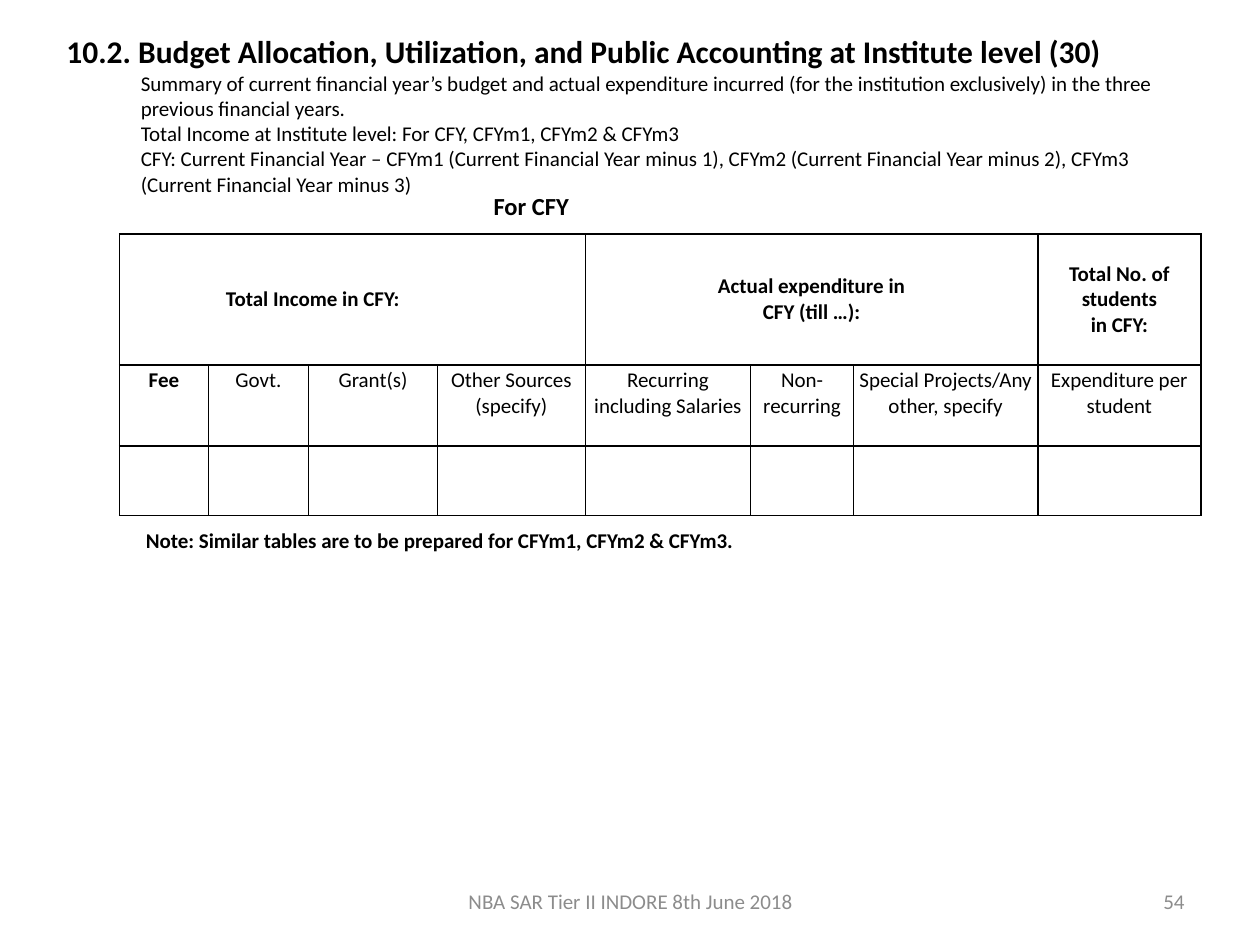
from lxml.etree import SubElement
from pptx import Presentation
from pptx.dml.color import RGBColor
from pptx.enum.text import MSO_ANCHOR as Anchor, MSO_AUTO_SIZE as AutoSize, PP_ALIGN as Align
from pptx.oxml.ns import qn
from pptx.util import Cm, Pt

BLACK, GREY = "000000", "8C8C8C"
COLUMN_WIDTHS = [1.79, 2.02, 2.6, 2.98, 3.33, 2.08, 3.71, 3.29]
ROW_HEIGHTS = [2.64, 1.63, 1.4]
# First column, last column, lines, right margin
GROUP_HEADINGS = [
    (0, 3, ["Total Income in CFY:"], 1.65),
    (4, 6, ["Actual expenditure in", "CFY (till …):"], 0.05),
    (7, 7, ["Total No. of students", "in CFY:"], 0.05),
]
COLUMN_HEADINGS = [
    ["Fee"], ["Govt."], ["Grant(s)"], ["Other Sources", "(specify)"],
    ["Recurring including Salaries"], ["Non-recurring"],
    ["Special Projects/Any other, specify"], ["Expenditure per student"],
]
SUMMARY = [
    "Summary of current financial year’s budget and actual expenditure incurred "
    "(for the institution exclusively) in the three previous financial years.",
    "Total Income at Institute level: For CFY, CFYm1, CFYm2 & CFYm3",
    "CFY: Current Financial Year – CFYm1 (Current Financial Year minus 1), "
    "CFYm2 (Current Financial Year minus 2), CFYm3 (Current Financial Year minus 3)",
]


def rgb(color):
    return RGBColor.from_string(color)


def style(paragraph, size=12, bold=False, color=BLACK, align=Align.LEFT):
    paragraph.alignment = align
    font = paragraph.font
    font.name, font.size, font.bold = "Calibri", Pt(size), bold
    font.color.rgb = rgb(color)


def add_text(slide, box, lines, anchor=Anchor.TOP, wrap=True, **look):
    frame = slide.shapes.add_textbox(*map(Cm, box)).text_frame
    frame.word_wrap = wrap
    frame.auto_size = AutoSize.NONE
    frame.vertical_anchor = anchor
    frame.text = "\n".join(lines)
    for paragraph in frame.paragraphs:
        style(paragraph, **look)
    return frame


def add_borders(cell, color=BLACK, width=1):
    properties = cell._tc.get_or_add_tcPr()
    for side in ("a:lnL", "a:lnR", "a:lnT", "a:lnB"):
        line = SubElement(properties, qn(side), w=str(Pt(width)))
        fill = SubElement(line, qn("a:solidFill"))
        SubElement(fill, qn("a:srgbClr"), val=color)


def fill_cell(cell, lines, bold=False, anchor=Anchor.TOP, right=0.05):
    cell.margin_left = cell.margin_top = cell.margin_bottom = Cm(0.05)
    cell.margin_right = Cm(right)
    cell.vertical_anchor = anchor
    cell.text = "\n".join(lines)
    for paragraph in cell.text_frame.paragraphs:
        style(paragraph, bold=bold, align=Align.CENTER)


def add_budget_table(slide):
    table = slide.shapes.add_table(
        len(ROW_HEIGHTS), len(COLUMN_WIDTHS), Cm(2.41), Cm(4.72),
        Cm(sum(COLUMN_WIDTHS)), Cm(sum(ROW_HEIGHTS))).table
    table.first_row = table.horz_banding = False
    for column, width in zip(table.columns, COLUMN_WIDTHS):
        column.width = Cm(width)
    for row, height in zip(table.rows, ROW_HEIGHTS):
        row.height = Cm(height)
    for cell in table.iter_cells():
        add_borders(cell)
        cell.fill.background()

    # Heading rows
    for first, last, lines, right in GROUP_HEADINGS:
        heading = table.cell(0, first)
        if last > first:
            heading.merge(table.cell(0, last))
        fill_cell(heading, lines, bold=True, anchor=Anchor.MIDDLE, right=right)
    for index, lines in enumerate(COLUMN_HEADINGS):
        fill_cell(table.cell(1, index), lines, bold=index == 0)


def main():
    deck = Presentation()
    deck.slide_width, deck.slide_height = Cm(25.4), Cm(19.05)
    slide = deck.slides.add_slide(deck.slide_layouts[6])

    # Heading with indented summary
    intro = add_text(
        slide, (1.09, 0.53, 23.19, 3.58),
        ["10.2. Budget Allocation, Utilization, and Public Accounting at Institute level (30)"]
        + SUMMARY)
    heading, *summary = intro.paragraphs
    style(heading, size=18, bold=True)
    for paragraph in summary:
        paragraph._p.get_or_add_pPr().set("marL", str(Cm(1.5)))

    # Budget table with its caption and note
    add_text(slide, (9.7, 3.73, 2.03, 0.86), ["For CFY"], wrap=False, size=14, bold=True)
    add_budget_table(slide)
    add_text(slide, (2.69, 10.52, 22.2, 0.76),
             ["Note: Similar tables are to be prepared for CFYm1, CFYm2 & CFYm3."], bold=True)

    # Footer and page number
    add_text(slide, (8.69, 17.65, 8.05, 1.02), ["NBA SAR Tier II INDORE 8th June 2018"],
             anchor=Anchor.MIDDLE, color=GREY, align=Align.CENTER)
    add_text(slide, (18.21, 17.65, 5.92, 1.02), ["54"],
             anchor=Anchor.MIDDLE, color=GREY, align=Align.RIGHT)

    deck.save("out.pptx")


if __name__ == "__main__":
    main()
